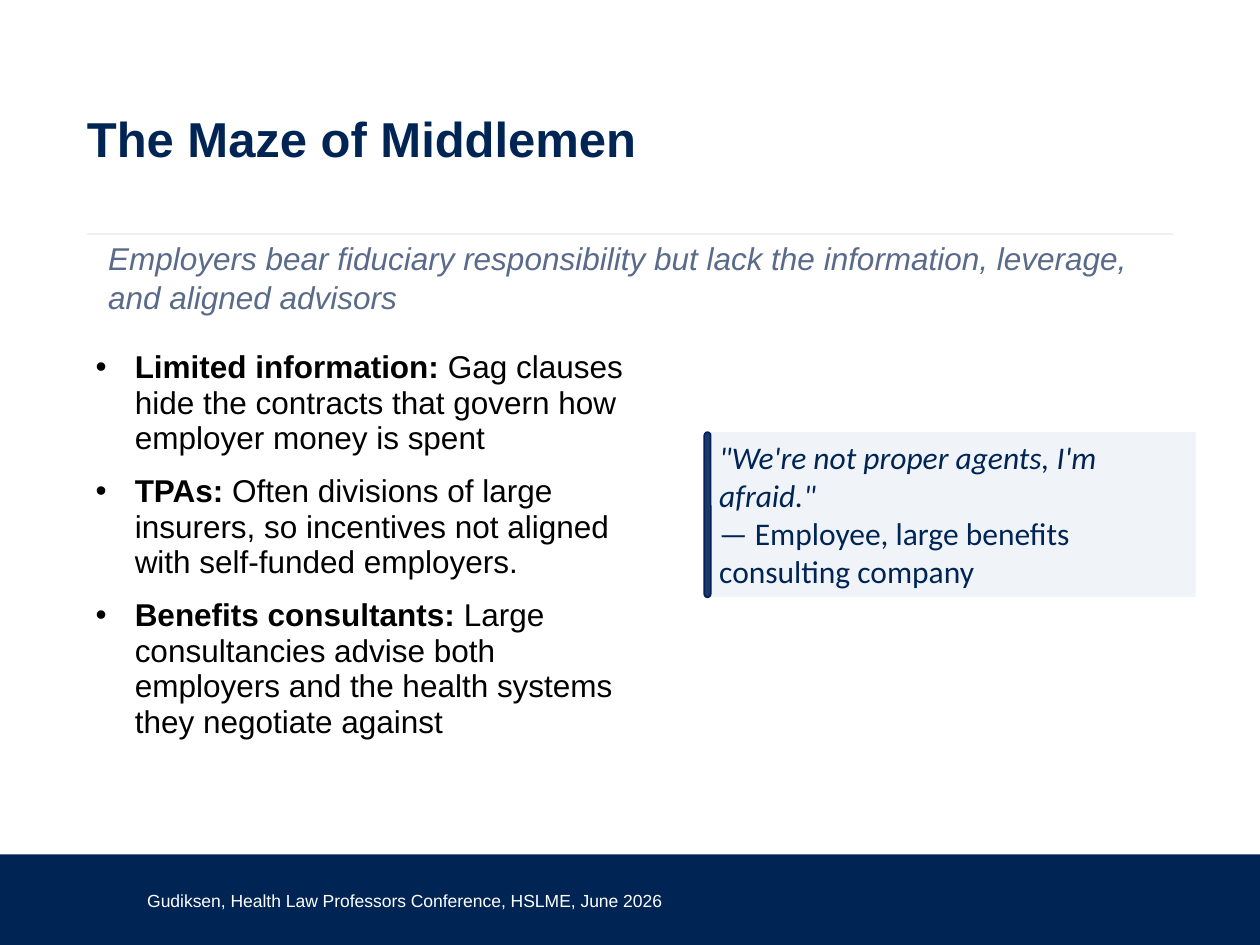
from lxml import etree
from pptx import Presentation, util as u
from pptx.dml.color import RGBColor
from pptx.enum import shapes, text
from pptx.oxml.ns import qn

COLORS = {"navy": "002554", "rule": "EEF0F5", "panel": "F0F4F9", "accent": "203864",
          "edge": "002060", "muted": "5A6A8A", "black": "000000", "white": "FFFFFF"}
TITLE = "The Maze of Middlemen"
SUBTITLE = ("Employers bear fiduciary responsibility but lack the information, "
            "leverage, and aligned advisors")
BULLETS = [
    ("Limited information: ", "Gag clauses hide the contracts that govern how employer money is spent"),
    ("TPAs:", " Often divisions of large insurers, so incentives not aligned with self-funded employers."),
    ("Benefits consultants: ", "Large consultancies advise both employers and the health systems they negotiate against"),
]
QUOTE = "\"We're not proper agents, I'm afraid.\""
SPEAKER = "— Employee, large benefits consulting company"
FOOTER = "Gudiksen, Health Law Professors Conference, HSLME, June 2026"

WIDTH, HEIGHT = 10, 7.5
MARGIN, INDENT = 0.69, 0.76
FOOTER_TOP = 6.78
RULE_Y = 1.86
QUOTE_TOP, QUOTE_HEIGHT = 3.43, 1.31


def rgb(name):
    return RGBColor.from_string(COLORS[name])


def inches(*values):
    return [u.Inches(v) for v in values]


def add_run(p, words, size, color, font="Arial", bold=False, italic=False):
    r = p.add_run()
    r.text = words
    r.font.name, r.font.size = font, u.Pt(size)
    r.font.bold, r.font.italic = bold, italic
    r.font.color.rgb = rgb(color)


def set_frame(sp, anchor=text.MSO_ANCHOR.TOP, insets=(0.1, 0.05, 0.1, 0.05)):
    tf = sp.text_frame
    tf.word_wrap, tf.vertical_anchor = True, anchor
    tf.margin_left, tf.margin_top, tf.margin_right, tf.margin_bottom = inches(*insets)
    tf.paragraphs[0].alignment = text.PP_ALIGN.LEFT
    return tf


def add_block(s, kind, box, fill, line=None):
    sp = s.shapes.add_shape(kind, *inches(*box))
    sp.shadow.inherit = False
    sp.fill.solid()
    sp.fill.fore_color.rgb = rgb(fill)
    if line:
        sp.line.color.rgb, sp.line.width = rgb(line), u.Pt(1)
    else:
        sp.line.fill.background()
    return sp


def add_text(s, box, **frame):
    return set_frame(s.shapes.add_textbox(*inches(*box)), **frame)


def add_bullet(p):
    pPr = p._p.get_or_add_pPr()
    pPr.set("marL", str(u.Inches(0.31)))
    pPr.set("indent", str(-u.Inches(0.31)))
    etree.SubElement(pPr, qn("a:buFont")).set("typeface", "Arial")
    etree.SubElement(pPr, qn("a:buChar")).set("char", "•")


def main():
    prs = Presentation()
    prs.slide_width, prs.slide_height = inches(WIDTH, HEIGHT)
    s = prs.slides.add_slide(prs.slide_layouts[5])

    add_block(s, shapes.MSO_SHAPE.RECTANGLE,
              (0, FOOTER_TOP, WIDTH, HEIGHT - FOOTER_TOP), "navy")
    rule = s.shapes.add_connector(shapes.MSO_CONNECTOR.STRAIGHT,
                                  *inches(MARGIN, RULE_Y, WIDTH - MARGIN, RULE_Y))
    rule.line.color.rgb, rule.line.width = rgb("rule"), u.Pt(1)
    etree.SubElement(rule._element.spPr, qn("a:effectLst"))

    title = s.shapes.title
    title.left, title.top, title.width, title.height = inches(
        MARGIN, 0.4, WIDTH - 2 * MARGIN, 1.45)
    tf = set_frame(title, text.MSO_ANCHOR.MIDDLE, (0, 0.05, 0, 0.05))
    tf.auto_size = text.MSO_AUTO_SIZE.NONE
    tf.paragraphs[0].line_spacing = 0.9
    add_run(tf.paragraphs[0], TITLE, 28, "navy", bold=True)

    tf = add_text(s, (INDENT, 1.83, WIDTH - 2 * INDENT, 0.71))
    tf.paragraphs[0].line_spacing = 1.05
    add_run(tf.paragraphs[0], SUBTITLE, 18, "muted", italic=True)

    tf = add_text(s, (INDENT, 2.78, 4.28, 3.61), insets=(0, 0, 0, 0.05))
    for i, (lead, detail) in enumerate(BULLETS):
        p = tf.add_paragraph() if i else tf.paragraphs[0]
        add_bullet(p)
        p.line_spacing = 0.94
        if i:
            p.space_before = u.Pt(10)
        add_run(p, lead, 18, "black", bold=True)
        add_run(p, detail, 18, "black")

    panel = add_block(s, shapes.MSO_SHAPE.RECTANGLE,
                      (5.61, QUOTE_TOP, 3.88, QUOTE_HEIGHT), "panel")
    tf = set_frame(panel)
    add_run(tf.paragraphs[0], QUOTE, 18, "navy", "Calibri", italic=True)
    p = tf.add_paragraph()
    p.alignment = text.PP_ALIGN.LEFT
    add_run(p, SPEAKER, 18, "navy", "Calibri")
    bar = add_block(s, shapes.MSO_SHAPE.ROUNDED_RECTANGLE,
                    (5.59, QUOTE_TOP, 0.05, QUOTE_HEIGHT), "accent", "edge")
    bar.adjustments[0] = 0.5

    tf = add_text(s, (1.07, 6.95, 4.51, 0.4), anchor=text.MSO_ANCHOR.MIDDLE)
    add_run(tf.paragraphs[0], FOOTER, 10, "white")

    prs.save("out.pptx")


if __name__ == "__main__":
    main()
